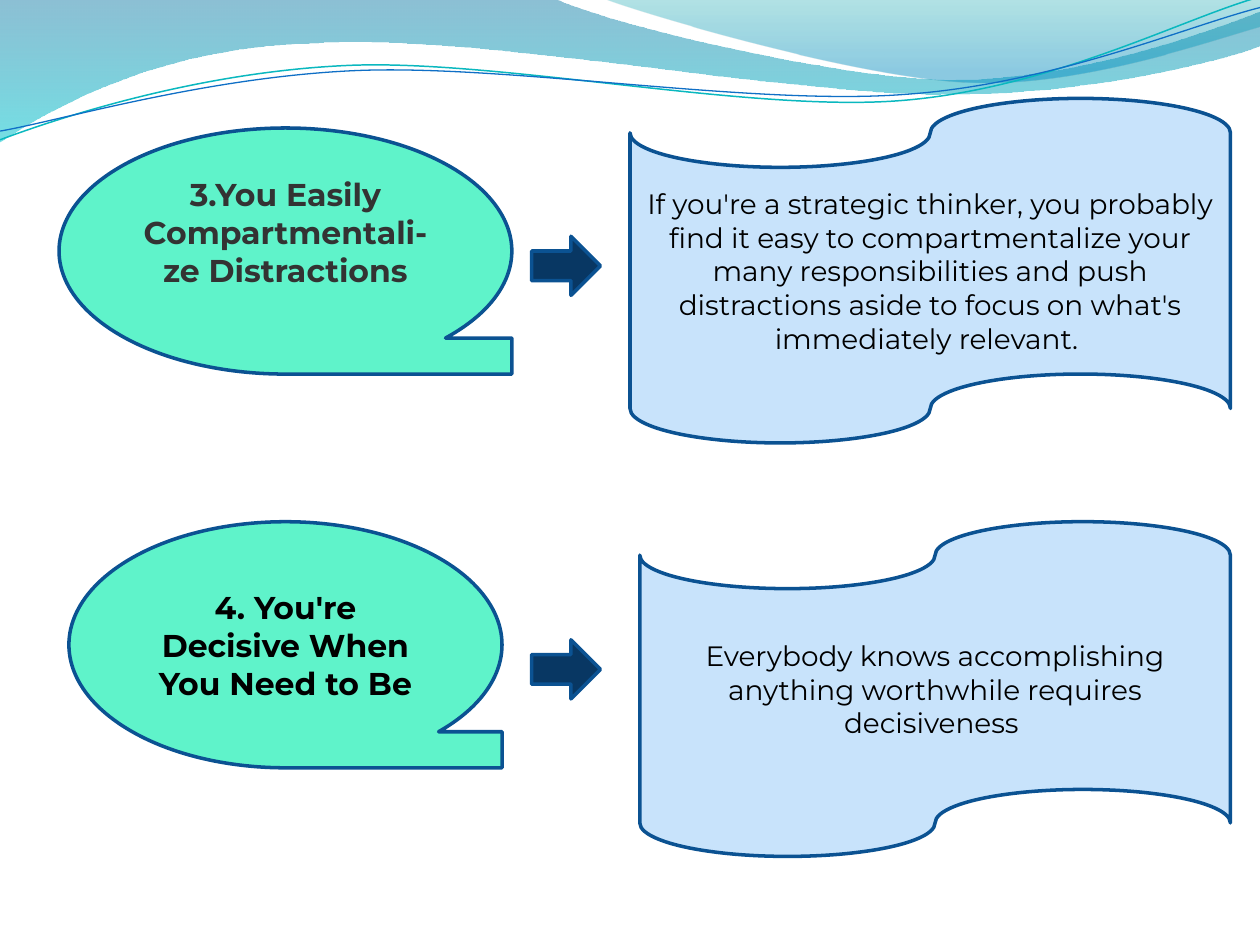
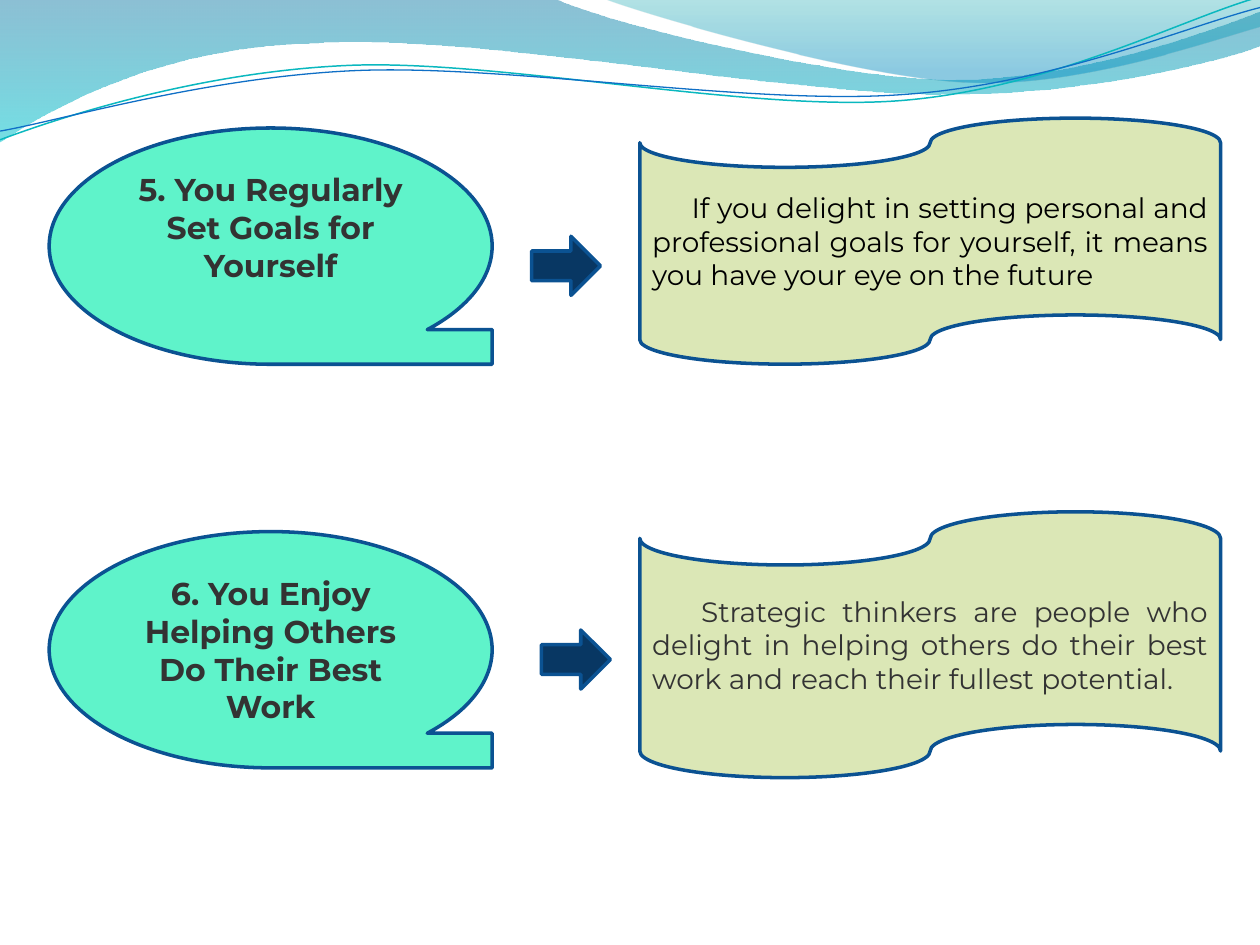
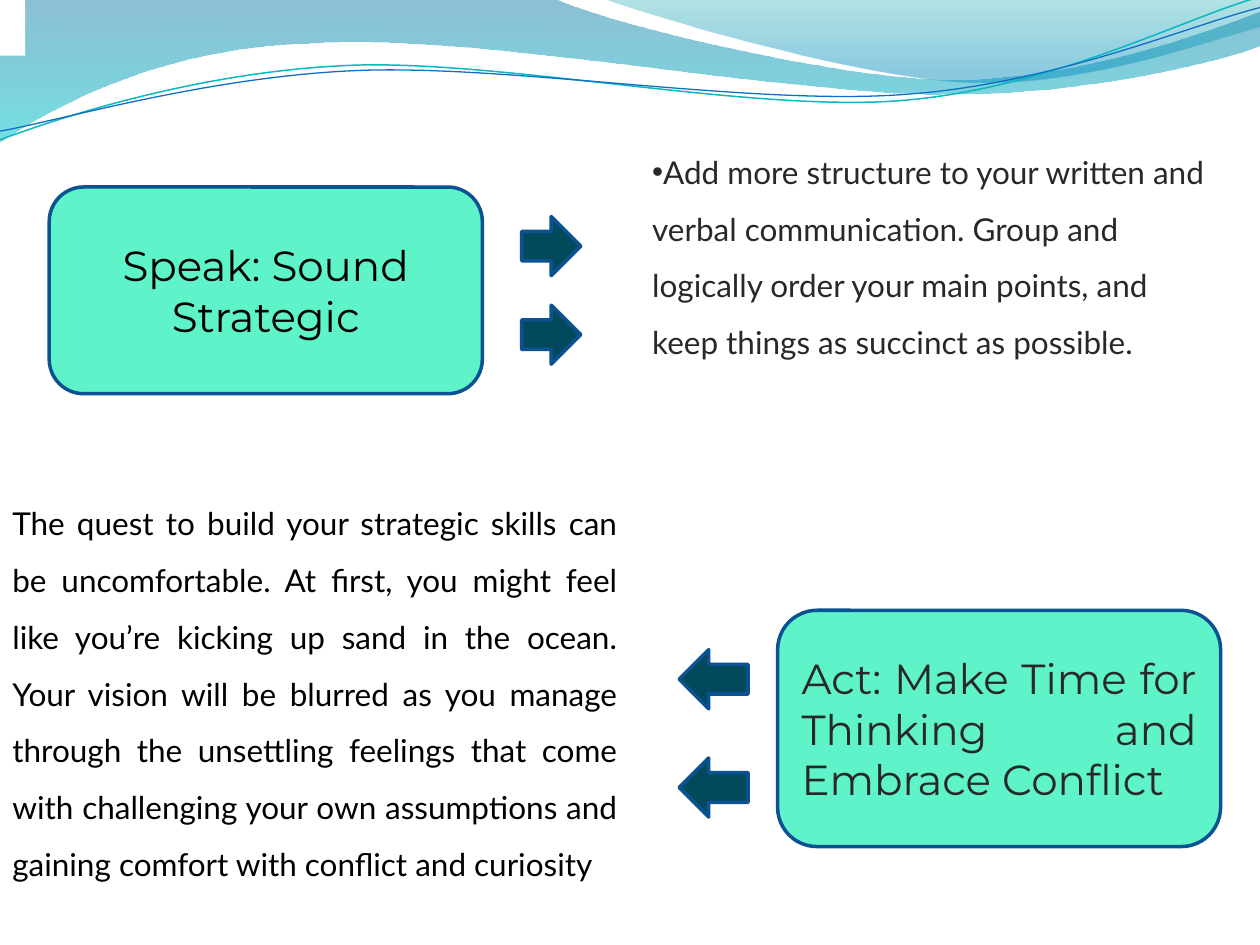
from dataclasses import dataclass, field

from lxml.etree import SubElement
from pptx import Presentation
from pptx.dml.color import RGBColor
from pptx.enum.shapes import MSO_SHAPE as SHAPE
from pptx.enum.text import MSO_ANCHOR as ANCHOR, PP_ALIGN as ALIGN
from pptx.oxml.ns import qn
from pptx.util import Pt

COLORS = {
    "mint": "5FF3CA", "sky": "C8E3FB", "olive": "DBE7B6",
    "navy": "083763", "teal": "03495C", "edge": "0B5292",
    "white": "FFFFFF", "black": "000000", "gray": "333333", "ink": "282828",
    "wave_blue": "0074A1", "wave_cyan": "00C6CF",
    "crest_teal": "00A1A9", "crest_blue": "008BBF",
    "line_teal": "0AB8BF", "line_blue": "0F6FC6",
}
GRID = 720 / 128

HEADING = {"name": "Montserrat", "size": Pt(18), "bold": True}
BODY = {"name": "Montserrat", "size": Pt(16), "bold": False}
BIG = {"name": "Montserrat", "size": Pt(24), "bold": False}
PLAIN = {"name": "Lato", "size": Pt(18), "bold": False}


@dataclass
class Wave:
    start: tuple
    segments: list
    stops: list = field(default_factory=list)
    line: str = ""
    width: float = 0


@dataclass
class Text:
    words: str
    font: dict
    color: str = "black"
    align: ALIGN = ALIGN.CENTER
    indent: float = 0
    raised: float = 0
    spacing: float = 1.0
    bullet: str = ""


@dataclass
class Block:
    kind: SHAPE
    left: float
    top: float
    width: float
    height: float
    fill: str
    text: Text | None = None
    line: str = "edge"


@dataclass
class Note:
    left: float
    top: float
    width: float
    height: float
    text: Text


WAVES = [
    Wave((0, 0), [
        (317, -0.7),
        (342.7, 12.2, 478.1, 45.4, 545.8, 45.4),
        (614.2, 45.4, 689.8, 18.7, 720, 6.5),
        (720.7, 25.9),
        (707.8, 31.7, 626.4, 54.7, 537.1, 54),
        (447.8, 54, 275, 20.2, 185, 24.5),
        (92.9, 25.9, 33.1, 59.8, -0.7, 81.4),
        (0, 0),
    ], stops=[(0, "wave_blue", 45), (1, "wave_cyan", 55)]),
    Wave((344.9, -0.7), [
        (366.5, 7.9, 491, 44.6, 553.7, 46.8),
        (616.3, 49.7, 691.9, 23, 720, 15.1),
        (720, 0),
        (344.9, -0.7),
    ], stops=[(0, "crest_teal", 30), (0.8, "crest_blue", 45)]),
    Wave((0, 79.9), [
        (34.6, 67, 113.8, 41, 199.4, 37.4),
        (284.4, 33.8, 427, 64.1, 513.4, 57.6),
        (599.8, 51.1, 675.4, 10.8, 718.6, -1.4),
    ], line="line_teal", width=0.85),
    Wave((0, 74.9), [
        (33.8, 69.1, 118.1, 43.9, 203.8, 40.3),
        (290.2, 36.7, 429.8, 60.5, 516.2, 54),
        (601.9, 48.2, 677.5, 15.1, 720, 4.3),
    ], line="line_blue", width=0.75),
]


def bubble(left, top, width, height, words, color="gray", raised=0) -> Block:
    return Block(SHAPE.FLOWCHART_SEQUENTIAL_ACCESS_STORAGE, left, top, width, height,
                 "mint", Text(words, HEADING, color, raised=raised))


def scroll(left, top, width, height, fill, words, **style) -> Block:
    return Block(SHAPE.FLOWCHART_PUNCHED_TAPE, left, top, width, height,
                 fill, Text(words, BODY, **style))


def arrow(left, top, width=7, fill="navy", kind=SHAPE.RIGHT_ARROW) -> Block:
    return Block(kind, left, top, width, 6, fill)


def card(left, top, width, height, words, **style) -> Block:
    return Block(SHAPE.ROUNDED_RECTANGLE, left, top, width, height,
                 "mint", Text(words, BIG, **style))


SLIDES = [
    [
        bubble(6, 13, 46, 25, "3.You Easily Compartmentali-ze Distractions", raised=22),
        bubble(7, 53, 44, 25, "4. You're Decisive When You Need to Be", "black"),
        scroll(64, 10, 61, 35, "sky",
               "If you're a strategic thinker, you probably find it easy to "
               "compartmentalize your many responsibilities and push distractions "
               "aside to focus on what's immediately relevant. "),
        scroll(65, 53, 60, 34, "sky",
               "Everybody knows accomplishing anything worthwhile requires decisiveness "),
        arrow(54, 65),
        arrow(54, 24),
    ],
    [
        bubble(5, 13, 45, 24, "5. You Regularly Set Goals for Yourself", raised=22),
        bubble(5, 54, 45, 24, "6. You Enjoy Helping Others Do Their Best Work"),
        scroll(65, 12, 59, 25, "olive",
               "If you delight in setting personal and professional goals for "
               "yourself, it means you have your eye on the future",
               align=ALIGN.JUSTIFY, indent=22.5),
        scroll(65, 52, 59, 27, "olive",
               "Strategic thinkers are people who delight in helping others do "
               "their best work and reach their fullest potential.",
               color="gray", align=ALIGN.JUSTIFY, indent=28),
        arrow(54, 24),
        arrow(55, 64),
    ],
    [
        card(5, 19, 44, 21, "Speak: Sound Strategic"),
        card(79, 62, 45, 24, "Act: Make Time for Thinking and Embrace Conflict",
             color="ink", align=ALIGN.JUSTIFY),
        *[arrow(53, top, 6, "teal") for top in (31, 22)],
        *[arrow(69, top, 7, "teal", SHAPE.LEFT_ARROW) for top in (66, 77)],
        Block(SHAPE.RECTANGLE, 0, 0, 2.55, 5.65, "white", line=""),
        Note(65, 13, 59, 30, Text(
            "Add more structure to your written and verbal communication. Group and "
            "logically order your main points, and keep things as succinct as possible.",
            PLAIN, "ink", ALIGN.LEFT, spacing=1.5, bullet="•")),
        Note(0, 48.7, 64, 47.3, Text(
            "The quest to build your strategic skills can be uncomfortable. At first, "
            "you might feel like you’re kicking up sand in the ocean. Your vision will "
            "be blurred as you manage through the unsettling feelings that come with "
            "challenging your own assumptions and gaining comfort with conflict and "
            "curiosity", PLAIN, align=ALIGN.JUSTIFY, spacing=1.5)),
    ],
]


def rgb(name: str) -> RGBColor:
    return RGBColor.from_string(COLORS[name])


def box(item: Block | Note) -> list:
    return [Pt(GRID * n) for n in (item.left, item.top, item.width, item.height)]


def set_line(sp, name: str, width: float) -> None:
    if name:
        sp.line.color.rgb = rgb(name)
        sp.line.width = Pt(width)
    else:
        sp.line.fill.background()


def bend(sp, segments: list) -> None:
    steps = sp.element.spPr.iter(qn("a:lnTo"))
    steps = iter(list(steps))
    for segment in segments:
        first, *others = [next(steps) for _ in range(len(segment) // 2)]
        if others:
            first.tag = qn("a:cubicBezTo")
        for step in others:
            first.append(step[0])
            step.getparent().remove(step)


def draw_wave(slide, wave: Wave):
    builder = slide.shapes.build_freeform(*map(Pt, wave.start))
    points = [(Pt(x), Pt(y)) for segment in wave.segments
              for x, y in zip(segment[::2], segment[1::2])]
    builder.add_line_segments(points, close=bool(wave.stops))
    sp = builder.convert_to_shape()
    bend(sp, wave.segments)
    sp.shadow.inherit = False
    set_line(sp, wave.line, wave.width)
    if not wave.stops:
        sp.fill.background()
        return sp
    sp.fill.gradient()
    sp.fill.gradient_angle = 270
    for stop, (position, color, _) in zip(sp.fill.gradient_stops, wave.stops):
        stop.position = position
        stop.color.rgb = rgb(color)
    tints = sp.element.spPr.find(qn("a:gradFill")).iter(qn("a:srgbClr"))
    for tint, (_, _, opacity) in zip(list(tints), wave.stops):
        SubElement(tint, qn("a:alpha"), val=str(opacity * 1000))
    return sp


def write(tf, text: Text) -> None:
    tf.word_wrap = True
    tf.margin_bottom = Pt(3.6 + text.raised)
    p = tf.paragraphs[0]
    p.alignment = text.align
    p.line_spacing = text.spacing
    pPr = p._p.get_or_add_pPr()
    if text.indent:
        pPr.set("indent", str(Pt(text.indent)))
    if text.bullet:
        SubElement(pPr, qn("a:buFont"), typeface="Arial")
        SubElement(pPr, qn("a:buChar"), char=text.bullet)
    r = p.add_run()
    r.text = text.words
    for name, value in text.font.items():
        setattr(r.font, name, value)
    r.font.color.rgb = rgb(text.color)


def draw_block(slide, block: Block) -> None:
    sp = slide.shapes.add_shape(block.kind, *box(block))
    sp.shadow.inherit = False
    sp.fill.solid()
    sp.fill.fore_color.rgb = rgb(block.fill)
    set_line(sp, block.line, 2)
    if block.text:
        sp.text_frame.vertical_anchor = ANCHOR.MIDDLE
        write(sp.text_frame, block.text)


def draw_note(slide, note: Note) -> None:
    write(slide.shapes.add_textbox(*box(note)).text_frame, note.text)


def add_waves(layout, slide) -> None:
    for ph in list(layout.placeholders):
        ph.element.getparent().remove(ph.element)
    for sp in [draw_wave(slide, wave) for wave in WAVES]:
        layout.shapes.element.append(sp.element)


def main() -> None:
    prs = Presentation()
    prs.slide_width, prs.slide_height = Pt(720), Pt(540)
    layout = prs.slide_layouts.get_by_name("Blank")
    slides = [prs.slides.add_slide(layout) for _ in SLIDES]
    add_waves(layout, slides[0])
    for slide, items in zip(slides, SLIDES):
        for item in items:
            draw = draw_note if isinstance(item, Note) else draw_block
            draw(slide, item)
    prs.save("out.pptx")


if __name__ == "__main__":
    main()
